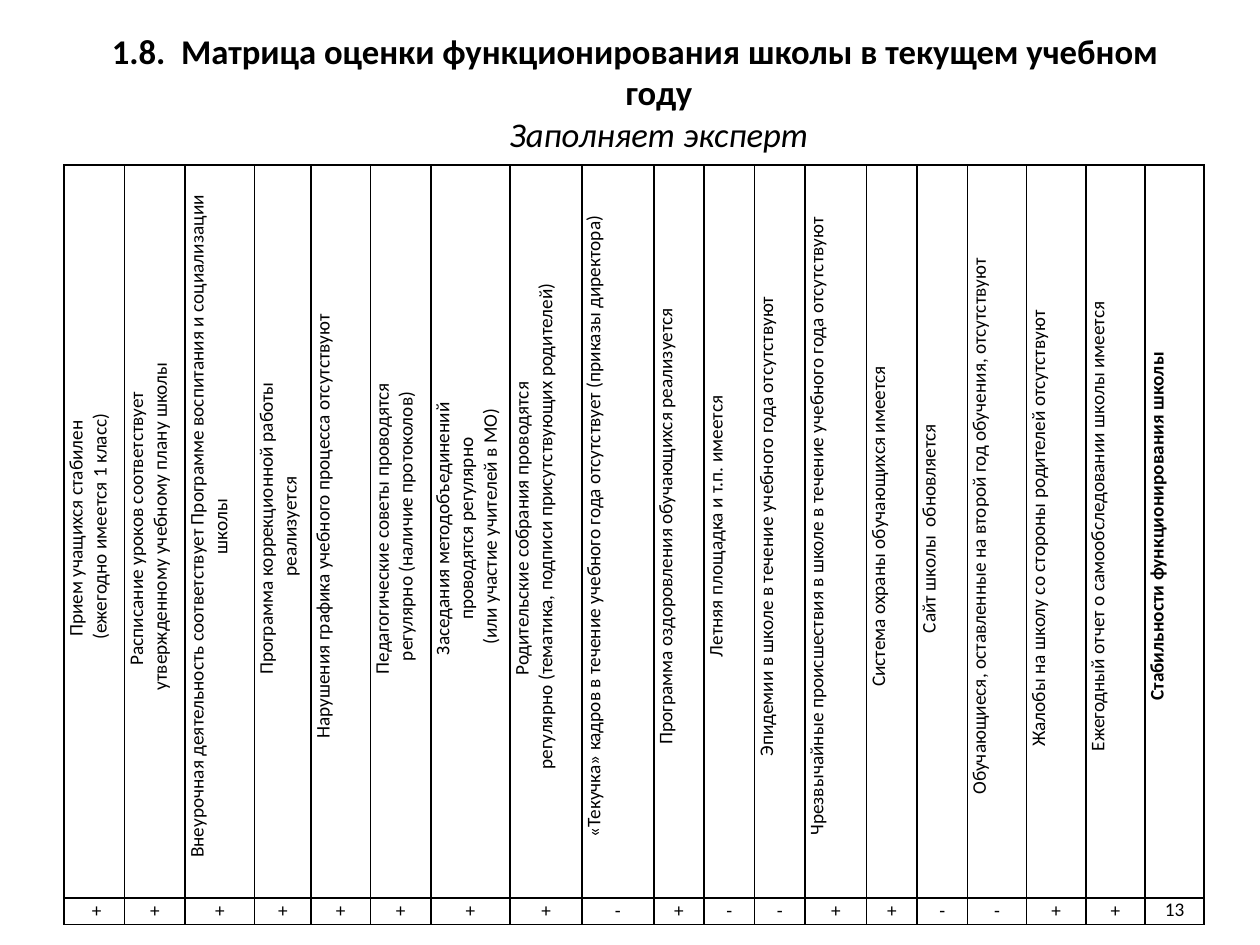
from lxml.etree import SubElement
from pptx import Presentation
from pptx.dml.color import RGBColor
from pptx.enum.text import MSO_ANCHOR, PP_ALIGN
from pptx.oxml.ns import qn
from pptx.util import Inches, Pt

COLORS = {"text": "000000", "border": "000000"}
FONT = "Calibri"
ROW_HEIGHTS = [5.54, 0.21]
CRITERIA = [
    (0.48, "Прием учащихся стабилен \v(ежегодно имеется 1 класс)", "\u00a0+"),
    (0.48, "Расписание уроков соответствует \vутвержденному учебному плану школы", "+"),
    (0.55, "Внеурочная деятельность соответствует Программе воспитания и социализации школы", "+"),
    (0.45, "Программа коррекционной работы \vреализуется", "+"),
    (0.47, "Нарушения графика учебного процесса отсутствуют", "+"),
    (0.48, "Педагогические советы проводятся \vрегулярно (наличие протоколов)", "+"),
    (0.63, "Заседания методобъединений \vпроводятся регулярно \v(или участие учителей в МО)", "+"),
    (0.57, "Родительские собрания проводятся \vрегулярно (тематика, подписи присутствующих родителей)", "+"),
    (0.57, "«Текучка» кадров в течение учебного года отсутствует (приказы директора)", "-"),
    (0.40, "Программа оздоровления обучающихся реализуется", "+"),
    (0.40, "Летняя площадка и т.п. имеется", "-"),
    (0.40, "Эпидемии в школе в течение учебного года отсутствуют", "-"),
    (0.49, "Чрезвычайные происшествия в школе в течение учебного года отсутствуют", "+"),
    (0.40, "Система охраны обучающихся имеется", "+"),
    (0.40, "Сайт школы  обновляется ", "-"),
    (0.47, "Обучающиеся, оставленные на второй год обучения, отсутствуют", "-"),
    (0.47, "Жалобы на школу со стороны родителей отсутствуют ", "+"),
    (0.47, "Ежегодный отчет о самообследовании школы имеется", "+"),
    (0.47, "Стабильности функционирования школы", "13"),
]


def style_paragraph(p, size, margin=0, indent=0):
    """Centre a paragraph and set its font and indents."""
    p.alignment = PP_ALIGN.CENTER
    p.font.name = FONT
    p.font.size = Pt(size)
    p.font.color.rgb = RGBColor.from_string(COLORS["text"])
    pPr = p._p.get_or_add_pPr()
    pPr.set("marL", str(Inches(margin)))
    pPr.set("indent", str(Inches(indent)))


def add_borders(cell):
    """Draw a one point line on every side of a cell."""
    tcPr = cell._tc.get_or_add_tcPr()
    for side in ("a:lnL", "a:lnR", "a:lnT", "a:lnB"):
        ln = SubElement(tcPr, qn(side), w=str(Pt(1)))
        fill = SubElement(ln, qn("a:solidFill"))
        SubElement(fill, qn("a:srgbClr"), val=COLORS["border"])


def fill_cell(cell, text, margin=0):
    """Write and format one table cell."""
    cell.margin_left = cell.margin_right = Inches(0.05)
    cell.margin_top = cell.margin_bottom = 0
    cell.vertical_anchor = MSO_ANCHOR.MIDDLE
    add_borders(cell)
    cell.fill.background()
    p = cell.text_frame.paragraphs[0]
    p.text = text
    style_paragraph(p, 11, margin)


def add_title(s, left, top, width, height):
    """Place the bold heading and its italic second line."""
    tf = s.shapes.add_textbox(left, top, width, height).text_frame
    tf.word_wrap = True
    tf.vertical_anchor = MSO_ANCHOR.MIDDLE
    p = tf.paragraphs[0]
    style_paragraph(p, 19.8, 0.38, -0.38)
    r = p.add_run()
    r.text = "1.8.  Матрица оценки функционирования школы в текущем учебном году"
    r.font.bold = True
    p.add_line_break()
    r = p.add_run()
    r.text = "Заполняет эксперт"
    r.font.italic = True


def add_matrix(s, left, top, width, height):
    """Place the matrix of criteria over their marks."""
    table = s.shapes.add_table(2, len(CRITERIA), left, top, width, height).table
    table.first_row = table.horz_banding = False
    for row, row_height in zip(table.rows, ROW_HEIGHTS):
        row.height = Inches(row_height)
    for i, (col_width, criterion, mark) in enumerate(CRITERIA):
        table.columns[i].width = Inches(col_width)
        head, result = table.cell(0, i), table.cell(1, i)
        fill_cell(head, criterion, 0.08)
        head._tc.tcPr.set("vert", "vert270")
        fill_cell(result, mark)
    head.text_frame.paragraphs[0].font.bold = True
    result.vertical_anchor = MSO_ANCHOR.TOP


def main():
    """Build the slide and save it."""
    prs = Presentation()
    prs.slide_width, prs.slide_height = Inches(10), Inches(7.5)
    s = prs.slides.add_slide(prs.slide_layouts[6])
    add_title(s, Inches(0.51), Inches(0.29), Inches(9.06), Inches(0.88))
    add_matrix(s, Inches(0.51), Inches(1.31), Inches(9.06), Inches(5.75))
    prs.save("out.pptx")


if __name__ == "__main__":
    main()
